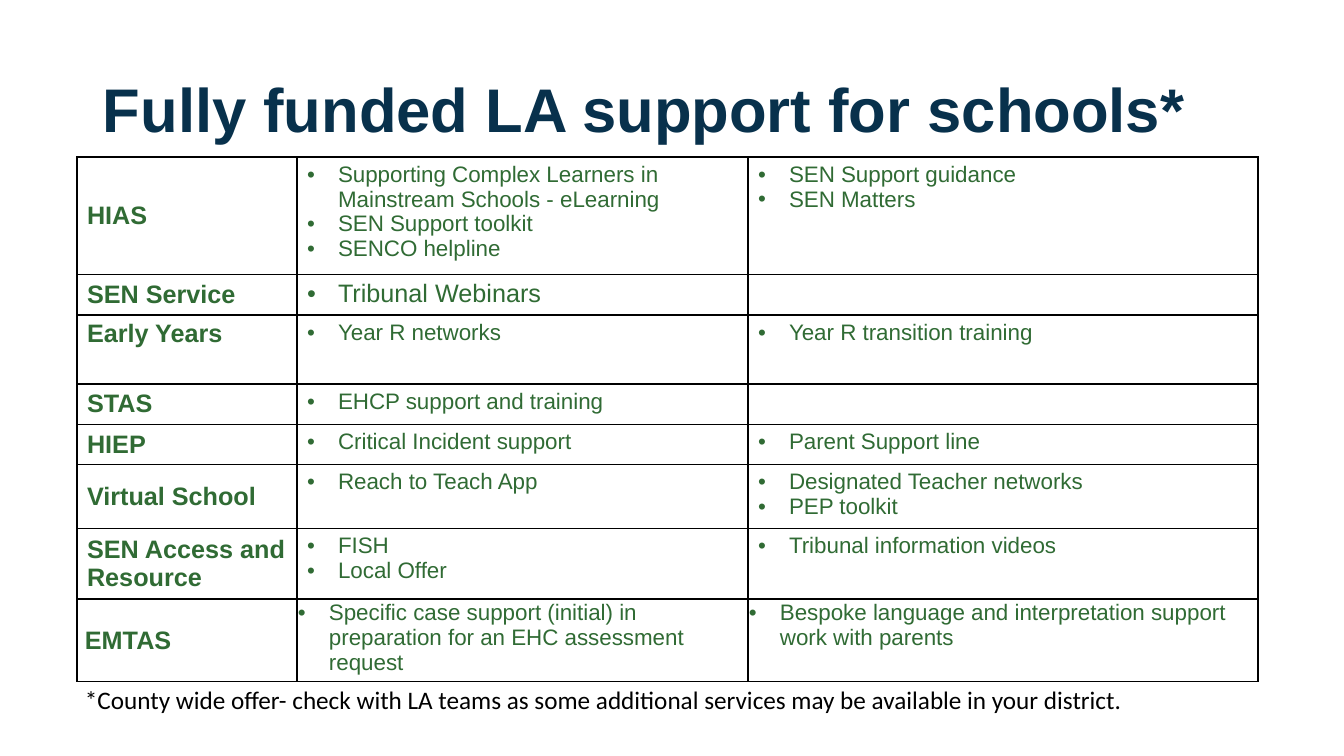
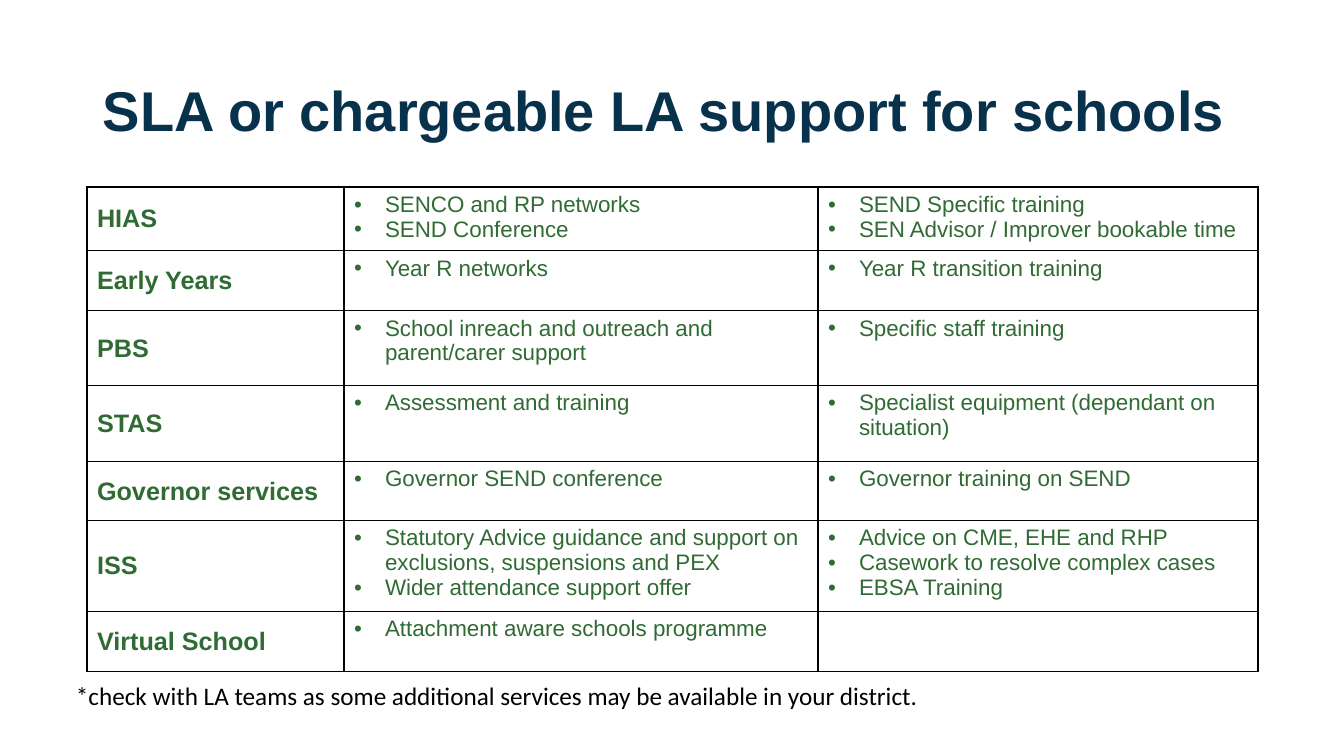
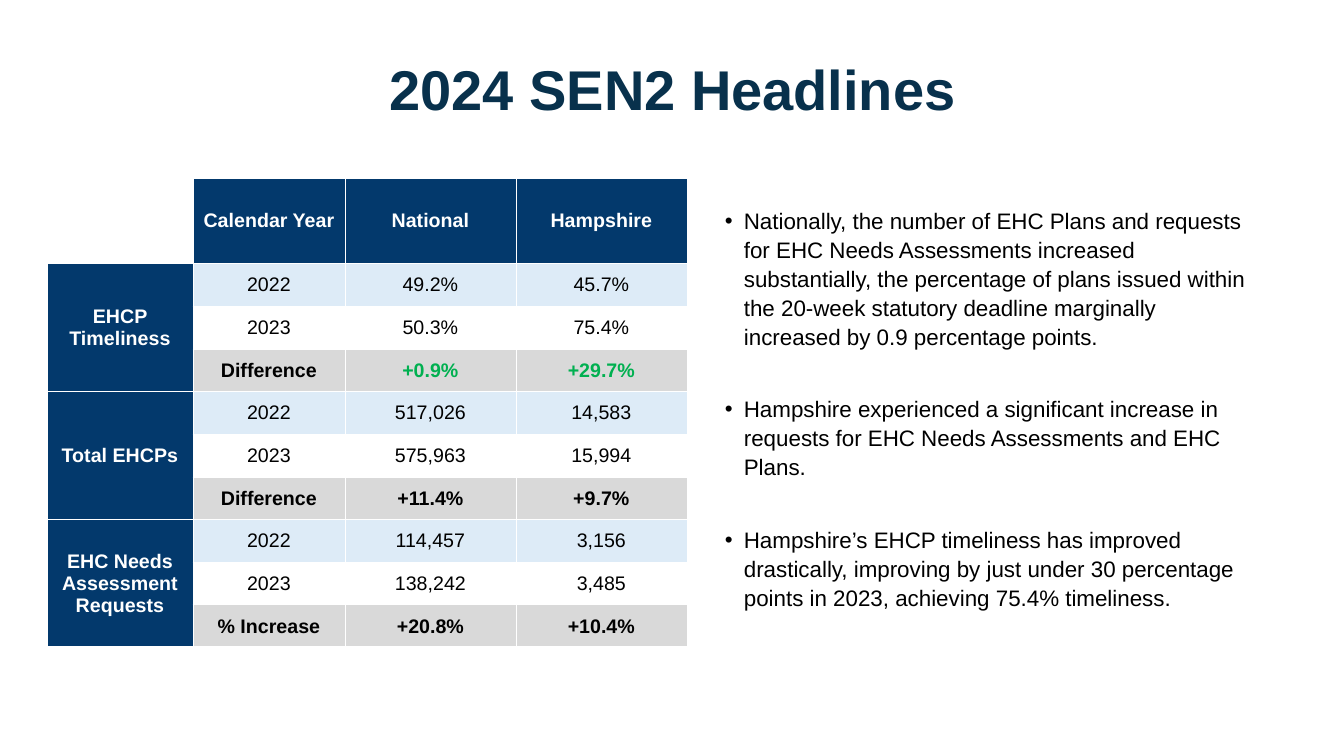
"""Build three slides on local authority SEN support and the 2024 SEN2 headlines."""
from lxml.etree import SubElement
from pptx import Presentation
from pptx.dml.color import RGBColor
from pptx.enum.text import MSO_ANCHOR as Anchor, PP_ALIGN as Align
from pptx.oxml.ns import qn
from pptx.util import Emu, Pt

NAVY = RGBColor(0x08, 0x31, 0x4C)
GREEN = RGBColor(0x30, 0x6B, 0x34)
BLACK = RGBColor(0x00, 0x00, 0x00)
WHITE = RGBColor(0xFF, 0xFF, 0xFF)
HEADER_BLUE = RGBColor(0x03, 0x39, 0x6C)
PALE_BLUE = RGBColor(0xDD, 0xEB, 0xF7)
GREY = RGBColor(0xD9, 0xD9, 0xD9)
RISE_GREEN = RGBColor(0x00, 0xB0, 0x50)
PX = 12192000 / 1344


def write(frame, lines, size, color, name="Arial", bold=False, align=Align.LEFT,
          spacing=1.0, after=0, indent=0):
    """Fill a text frame with one paragraph per line, bulleted when indented."""
    frame.word_wrap = True
    for index, line in enumerate(lines):
        paragraph = frame.add_paragraph() if index else frame.paragraphs[0]
        paragraph.text = line
        paragraph.alignment = align
        paragraph.line_spacing = spacing
        paragraph.space_after = Pt(after)
        if indent:
            properties = paragraph._p.get_or_add_pPr()
            properties.set("marL", str(round(indent * PX)))
            properties.set("indent", str(round(-indent * PX)))
            SubElement(properties, qn("a:buFont"), typeface="Arial")
            SubElement(properties, qn("a:buChar"), char="•")
        font = paragraph.font
        font.name, font.size, font.bold = name, Pt(size), bold
        font.color.rgb = color


def add_grid(slide, left, top, widths, heights, border, border_points):
    """Add an unfilled table with every cell border drawn."""
    table = slide.shapes.add_table(
        len(heights), len(widths), Emu(round(left * PX)), Emu(round(top * PX)),
        Emu(round(sum(widths) * PX)), Emu(round(sum(heights) * PX))).table
    table.first_row = table.horz_banding = False
    for column, width in zip(table.columns, widths):
        column.width = Emu(round(width * PX))
    for row, height in zip(table.rows, heights):
        row.height = Emu(round(height * PX))
    for cell in table.iter_cells():
        properties = cell._tc.get_or_add_tcPr()
        for side in ("a:lnL", "a:lnR", "a:lnT", "a:lnB"):
            line = SubElement(properties, qn(side), w=str(Pt(border_points)))
            fill = SubElement(line, qn("a:solidFill"))
            SubElement(fill, qn("a:srgbClr"), val=str(border))
        cell.fill.background()
    return table


presentation = Presentation()
presentation.slide_width = Emu(round(1344 * PX))
presentation.slide_height = Emu(round(756 * PX))

titles = [
    ("Fully funded LA support for schools*", 44, 146, Align.LEFT),
    ("SLA or chargeable LA support for schools", 40, 146, Align.LEFT),
    ("2024 SEN2 Headlines", 40, 104, Align.CENTER),
]
slides = []
for title, size, height, align in titles:
    slide = presentation.slides.add_slide(presentation.slide_layouts[6])
    box = slide.shapes.add_textbox(*(Emu(round(n * PX)) for n in (93, 40, 1159, height)))
    box.text_frame.vertical_anchor = Anchor.MIDDLE
    write(box.text_frame, [title], size, NAVY, bold=True, align=align, spacing=0.9)
    slides.append(slide)

funded_rows = [
    (110, "HIAS",
     ["Supporting Complex Learners in Mainstream Schools - eLearning",
      "SEN Support toolkit", "SENCO helpline"],
     ["SEN Support guidance", "SEN Matters"]),
    (38, "SEN Service", ["Tribunal Webinars"], []),
    (69, "Early Years", ["Year R networks"], ["Year R transition training"]),
    (39, "STAS", ["EHCP support and training"], []),
    (38, "HIEP", ["Critical Incident support"], ["Parent Support line"]),
    (60, "Virtual School", ["Reach to Teach App"],
     ["Designated Teacher networks", "PEP toolkit"]),
    (69, "SEN Access and Resource", ["FISH", "Local Offer"], ["Tribunal information videos"]),
    (77, "EMTAS",
     ["Specific case support (initial) in preparation for an EHC assessment request"],
     ["Bespoke language and interpretation support work with parents"]),
]
chargeable_rows = [
    (60, "HIAS", ["SENCO and RP networks", "SEND Conference"],
     ["SEND Specific training", "SEN Advisor / Improver bookable time"]),
    (60, "Early Years", ["Year R networks"], ["Year R transition training"]),
    (75, "PBS", ["School inreach and outreach and parent/carer support"],
     ["Specific staff training"]),
    (76, "STAS", ["Assessment and training"],
     ["Specialist equipment (dependant on situation)"]),
    (59, "Governor services", ["Governor SEND conference"], ["Governor training on SEND"]),
    (85, "ISS",
     ["Statutory Advice guidance and support on exclusions, suspensions and PEX",
      "Wider attendance support offer"],
     ["Advice on CME, EHE and RHP", "Casework to resolve complex cases", "EBSA Training"]),
    (60, "Virtual School", ["Attachment aware schools programme"], []),
]
support_pages = [
    (77, 157, (220, 451, 510), funded_rows, (75, 679, 1070, 40),
     "*County wide offer- check with LA teams as some additional services may be "
     "available in your district."),
    (87, 187, (257, 474, 440), chargeable_rows, (66, 675, 1197, 40),
     "*check with LA teams as some additional services may be available in your district."),
]
support_tables = []
for slide, (left, top, widths, rows, note_box, note) in zip(slides, support_pages):
    table = add_grid(slide, left, top, widths, [row[0] for row in rows], BLACK, 1)
    for row_index, (height, service, *offers) in enumerate(rows):
        label = table.cell(row_index, 0)
        label.vertical_anchor = Anchor.MIDDLE
        write(label.text_frame, [service], 18, GREEN, bold=True)
        for column_index, offer in enumerate(offers, 1):
            write(table.cell(row_index, column_index).text_frame, offer, 16, GREEN, indent=31)
    support_tables.append(table)
    box = slide.shapes.add_textbox(*(Emu(round(n * PX)) for n in note_box))
    write(box.text_frame, [note], 18, BLACK, name="Calibri")

funded_table = support_tables[0]
funded_table.cell(1, 1).text_frame.paragraphs[0].font.size = Pt(18)
funded_table.cell(2, 0).vertical_anchor = Anchor.TOP
for column_index, margin in enumerate((8, 1, 1)):
    cell = funded_table.cell(7, column_index)
    cell.margin_left = Emu(round(margin * PX))
    cell.margin_right = cell.margin_top = cell.margin_bottom = Emu(round(PX))

headings = ["", "Calendar Year", "National", "Hampshire"]
measures = [
    ("EHCP Timeliness", RISE_GREEN,
     [("2022", "49.2%", "45.7%"), ("2023", "50.3%", "75.4%"),
      ("Difference", "+0.9%", "+29.7%")]),
    ("Total EHCPs", BLACK,
     [("2022", "517,026", "14,583"), ("2023", "575,963", "15,994"),
      ("Difference", "+11.4%", "+9.7%")]),
    ("EHC Needs Assessment Requests", BLACK,
     [("2022", "114,457", "3,156"), ("2023", "138,242", "3,485"),
      ("% Increase", "+20.8%", "+10.4%")]),
]
table = add_grid(slides[2], 47, 178, (146, 152, 171, 171), [85] + [43, 43, 42] * 3, WHITE, 0.5)
entries = [(0, column, text, HEADER_BLUE, WHITE, True)
           for column, text in enumerate(headings) if text]
for group, (measure, change_color, years) in enumerate(measures):
    first_row = 1 + group * 3
    table.cell(first_row, 0).merge(table.cell(first_row + 2, 0))
    entries.append((first_row, 0, measure, HEADER_BLUE, WHITE, True))
    for offset, (values, fill) in enumerate(zip(years, (PALE_BLUE, None, GREY))):
        is_change = offset == 2
        for column, text in enumerate(values, 1):
            color = change_color if is_change and column > 1 else BLACK
            entries.append((first_row + offset, column, text, fill, color, is_change))
for row, column, text, fill, color, bold in entries:
    cell = table.cell(row, column)
    cell.vertical_anchor = Anchor.MIDDLE
    cell.margin_left = cell.margin_right = cell.margin_top = Emu(round(PX))
    cell.margin_bottom = 0
    if fill is not None:
        cell.fill.solid()
        cell.fill.fore_color.rgb = fill
    write(cell.text_frame, [text], 14, color, bold=bold, align=Align.CENTER)

findings = [
    "Nationally, the number of EHC Plans and requests for EHC Needs Assessments increased "
    "substantially, the percentage of plans issued within the 20-week statutory deadline "
    "marginally increased by 0.9 percentage points.",
    "Hampshire experienced a significant increase in requests for EHC Needs Assessments "
    "and EHC Plans.",
    "Hampshire’s EHCP timeliness has improved drastically, improving by just under 30 "
    "percentage points in 2023, achieving 75.4% timeliness.",
]
box = slides[2].shapes.add_textbox(*(Emu(round(n * PX)) for n in (715, 200, 552, 397)))
write(box.text_frame, findings, 16, BLACK, spacing=1.08, after=31, indent=19)

presentation.save("out.pptx")
